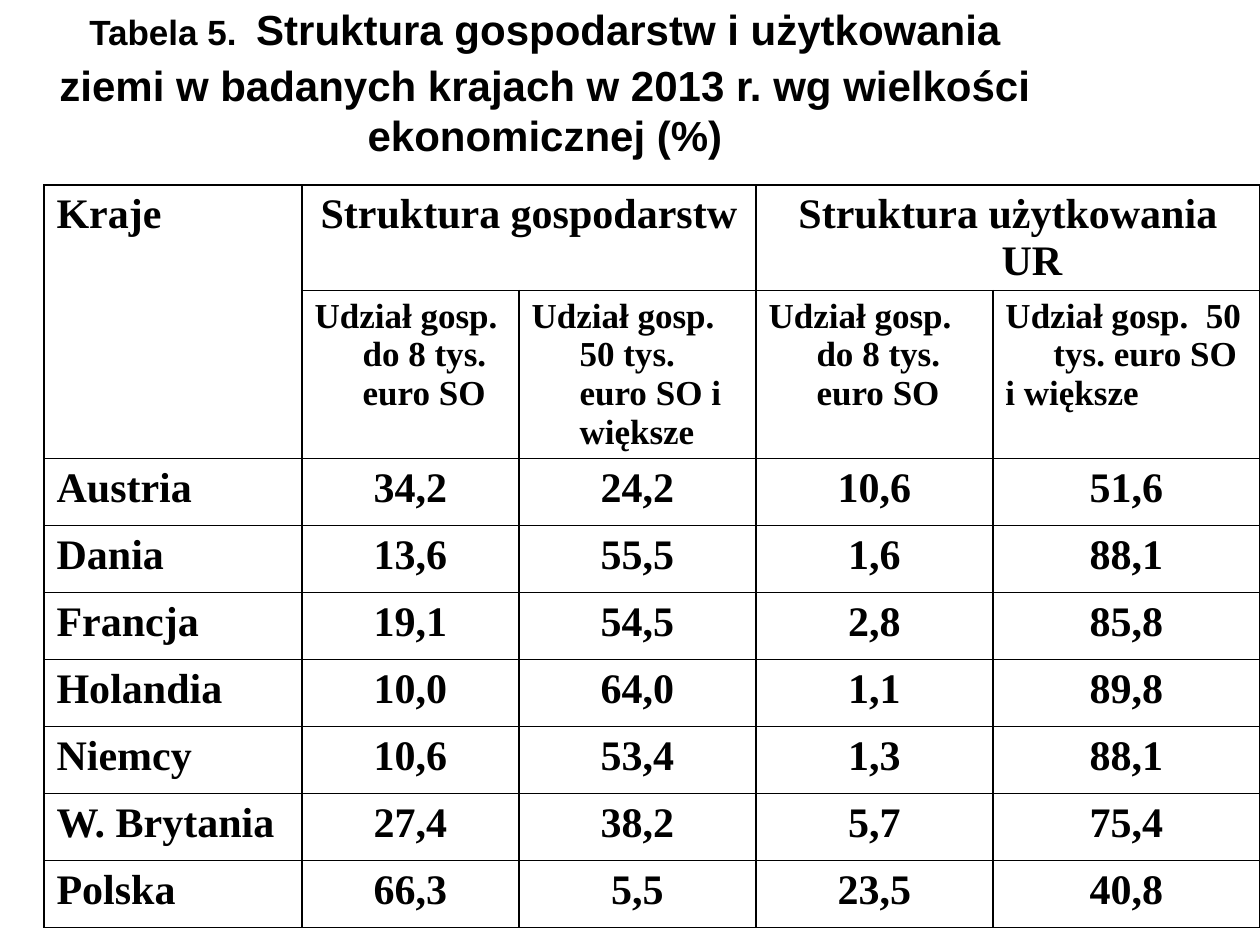
from lxml import etree
from pptx import Presentation
from pptx.dml.color import RGBColor
from pptx.enum.text import MSO_ANCHOR, MSO_AUTO_SIZE, PP_ALIGN
from pptx.oxml.ns import qn
from pptx.util import Pt

BLACK = RGBColor(0, 0, 0)
LEFT, CENTER = PP_ALIGN.LEFT, PP_ALIGN.CENTER
MIDDLE, FIXED = MSO_ANCHOR.MIDDLE, MSO_AUTO_SIZE.NONE
PX = 914400 // 126
INDENT = 48

TITLE = [
    ("Tabela 5.", 20),
    (" ", 40),
    ("Struktura gospodarstw i użytkowania ziemi w badanych krajach "
     "w 2013 r. wg wielkości ekonomicznej (%)", 24),
]
GROUPS = ["Kraje", "Struktura gospodarstw", "", "Struktura użytkowania UR", ""]
HEADS = [
    "",
    "Udział gosp. do 8 tys. euro SO",
    "Udział gosp.  50 tys. euro SO i większe",
    "Udział gosp. do 8 tys. euro SO",
    "Udział gosp.  50 tys. euro SO\ni większe",
]
DATA = [
    ["Austria", "34,2", "24,2", "10,6", "51,6"],
    ["Dania", "13,6", "55,5", "1,6", "88,1"],
    ["Francja", "19,1", "54,5", "2,8", "85,8"],
    ["Holandia", "10,0", "64,0", "1,1", "89,8"],
    ["Niemcy", "10,6", "53,4", "1,3", "88,1"],
    ["W. Brytania", "27,4", "38,2", "5,7", "75,4"],
    ["Polska", "66,3", "5,5", "23,5", "40,8"],
]
ROWS = [GROUPS, HEADS] + DATA
WIDTHS = [258, 217, 237, 237, 267]
HEIGHTS = [105, 168] + [67] * len(DATA)
MERGES = [((0, 0), (1, 0)), ((0, 1), (0, 2)), ((0, 3), (0, 4))]


def style(font, name, size):
    for key, val in dict(name=name, size=Pt(size), bold=True).items():
        setattr(font, key, val)
    font.color.rgb = BLACK


def frame(cell):
    props = cell._tc.get_or_add_tcPr()
    for side in ("lnL", "lnR", "lnT", "lnB"):
        line = etree.SubElement(props, qn("a:" + side), w=str(Pt(1)))
        fill = etree.SubElement(line, qn("a:solidFill"))
        etree.SubElement(fill, qn("a:srgbClr"), val=str(BLACK))
    cell.fill.background()


def write(cell, text, size, align):
    cell.text = text
    for para in cell.text_frame.paragraphs:
        para.alignment = align
        props = para._p.get_or_add_pPr()
        props.set("marL", str(INDENT * PX))
        props.set("indent", str(-INDENT * PX))
        style(para.font, "Times New Roman", size)
        for run in para.runs:
            style(run.font, "Times New Roman", size)


def add_title(slide):
    title = slide.shapes.title
    place = dict(left=44, top=0, width=1002, height=135)
    for key, val in place.items():
        setattr(title, key, val * PX)
    body = title.text_frame
    for key, val in dict(word_wrap=True, auto_size=FIXED,
                         vertical_anchor=MIDDLE).items():
        setattr(body, key, val)
    para = body.paragraphs[0]
    para.alignment = CENTER
    for text, size in TITLE:
        run = para.add_run()
        run.text = text
        style(run.font, "Arial", size)


def add_grid(slide):
    area = [n * PX for n in (44, 185, sum(WIDTHS), sum(HEIGHTS))]
    grid = slide.shapes.add_table(len(ROWS), len(WIDTHS), *area).table
    grid.first_row = grid.horz_banding = False
    for col, width in zip(grid.columns, WIDTHS):
        col.width = width * PX
    for row, height in zip(grid.rows, HEIGHTS):
        row.height = height * PX
    for r, row in enumerate(ROWS):
        for c, text in enumerate(row):
            cell = grid.cell(r, c)
            frame(cell)
            align = LEFT if c == 0 or r == 1 else CENTER
            write(cell, text, 20 if r == 1 else 24, align)
    for start, end in MERGES:
        grid.cell(*start).merge(grid.cell(*end))


def main():
    deck = Presentation()
    deck.slide_width, deck.slide_height = 1260 * PX, 945 * PX
    slide = deck.slides.add_slide(deck.slide_layouts[5])
    add_title(slide)
    add_grid(slide)
    deck.save("out.pptx")


if __name__ == "__main__":
    main()
